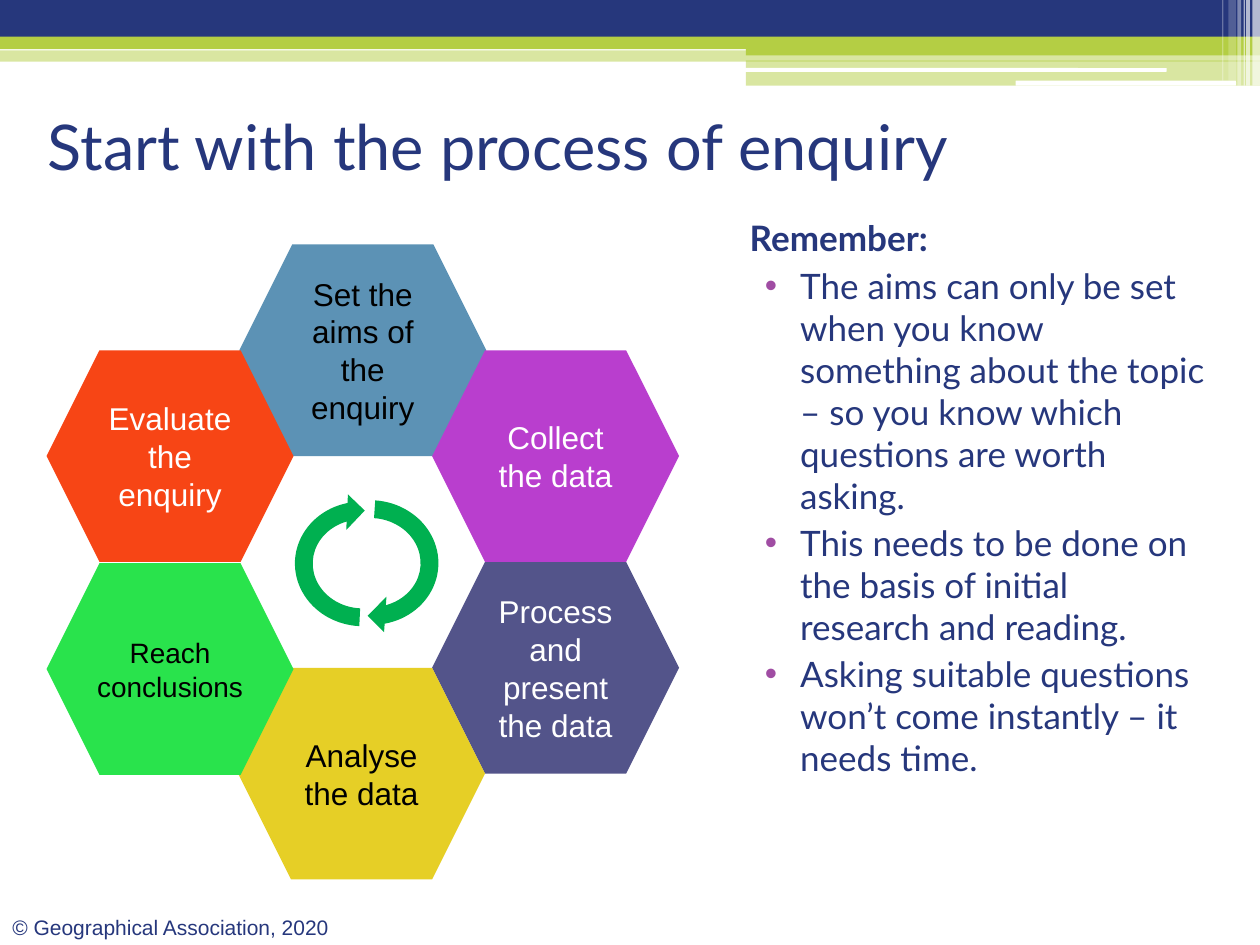
from pptx import Presentation
from pptx.util import Inches, Pt
from pptx.dml.color import RGBColor
from pptx.enum.shapes import MSO_SHAPE as Kind
from pptx.enum.text import PP_ALIGN as Align, MSO_ANCHOR as Anchor, MSO_AUTO_SIZE as Auto
from pptx.oxml.ns import qn
from lxml.etree import SubElement as Sub

NAVY, LIME, WHITE, BLACK = "26377C", "B4CE44", "FFFFFF", "000000"


def color(code):
    """Turn a hex string into a colour."""
    return RGBColor.from_string(code)


def write(para, text, size=20, font="Lato", ink=NAVY, bold=False, align=Align.LEFT, gap=0):
    """Put formatted text into a paragraph."""
    para.alignment = align
    para.space_before = Pt(gap)
    run = para.add_run()
    run.text = text
    run.font.size, run.font.name, run.font.bold = Pt(size), font, bold
    run.font.color.rgb = color(ink)


def bullet(para, mark=None, ink="A04DA3", left=0, hang=0):
    """Set the indent of a paragraph and its bullet, if any."""
    props = para._p.get_or_add_pPr()
    props.set("marL", str(Inches(left)))
    props.set("indent", str(Inches(hang)))
    if mark:
        Sub(Sub(props, qn("a:buClr")), qn("a:srgbClr"), val=ink)
        Sub(props, qn("a:buFont"), typeface="Arial")
        Sub(props, qn("a:buChar"), char=mark)
    else:
        Sub(props, qn("a:buNone"))


class Deck:
    """Hold the style and the current slide."""

    def __init__(self):
        """Start a deck with one slide."""
        self.show = Presentation()
        self.show.slide_width, self.show.slide_height = Inches(10), Inches(7.5)
        self.slide = self.show.slides.add_slide(self.show.slide_layouts[1])

    def shape(self, kind, box, fill, alpha=100, turn=0):
        """Add a flat preset shape."""
        item = self.slide.shapes.add_shape(kind, *map(Inches, box))
        item.shadow.inherit = False
        item.line.fill.background()
        item.fill.solid()
        item.fill.fore_color.rgb = color(fill)
        item.rotation = turn
        if alpha < 100:
            tint = item._element.spPr.find(qn("a:solidFill"))[0]
            Sub(tint, qn("a:alpha"), val=str(alpha * 1000))
        return item

    def hexagon(self, left, top, text, fill, ink, size=18, inset=0.1):
        """Add one step of the cycle."""
        item = self.shape(Kind.HEXAGON, (left, top, 1.96, 1.68), fill)
        frame = item.text_frame
        frame.word_wrap = True
        frame.vertical_anchor = Anchor.MIDDLE
        frame.margin_left = frame.margin_right = Inches(inset)
        write(frame.paragraphs[0], text, size=size, font="Arial", ink=ink, align=Align.CENTER)

    def holder(self, index, box):
        """Move a placeholder and return its text frame."""
        item = self.slide.placeholders[index]
        item.left, item.top, item.width, item.height = map(Inches, box)
        frame = item.text_frame
        frame.word_wrap = True
        frame.auto_size = Auto.NONE
        frame.vertical_anchor = Anchor.TOP
        return frame

    def title(self, text):
        """Fill the title."""
        write(self.holder(0, (0.28, 0.8, 8.07, 0.87)).paragraphs[0], text, size=36)

    def points(self, head, items):
        """Fill the body with a heading and bullets."""
        frame = self.holder(1, (5.85, 1.67, 3.83, 4.65))
        first = frame.paragraphs[0]
        bullet(first)
        write(first, head, bold=True)
        for text in items:
            para = frame.add_paragraph()
            bullet(para, "•", left=0.4, hang=-0.28)
            write(para, text, gap=3)

    def note(self, box, text):
        """Add a small text box."""
        frame = self.slide.shapes.add_textbox(*map(Inches, box)).text_frame
        frame.word_wrap = True
        write(frame.paragraphs[0], text, size=12, font="Arial")


def main():
    """Build the slide."""
    deck = Deck()
    bands = [
        ((0, 0.4, 10, 0.09), LIME, 50),
        ((0, 0, 10, 0.34), NAVY, 100),
        ((0, 0.29, 10, 0.1), LIME, 100),
        ((5.92, 0.34, 4.08, 0.1), LIME, 100),
        ((5.92, 0.48, 4.08, 0.2), LIME, 50),
    ]
    for box, fill, alpha in bands:
        deck.shape(Kind.RECTANGLE, box, fill, alpha)
    for box in [(5.91, 0.54, 3.35, 0.03), (8.06, 0.64, 1.75, 0.04)]:
        deck.shape(Kind.ROUNDED_RECTANGLE, box, WHITE)
    stripes = [
        (9.94, 0.06, 0.68, 65), (9.89, 0.03, 0.68, 65), (9.87, 0.01, 0.68, 60),
        (9.82, 0.03, 0.68, 40), (9.75, 0.06, 0.64, 20), (9.7, 0.01, 0.64, 30),
    ]
    for left, width, height, alpha in stripes:
        deck.shape(Kind.RECTANGLE, (left, 0, width, height), WHITE, alpha)

    deck.hexagon(3.43, 4.46, "Process and present the data", "53548A", WHITE)
    deck.hexagon(1.9, 1.94, "Set the aims of the enquiry", "5C92B5", BLACK)
    deck.hexagon(1.89, 5.3, "Analyse the data", "E6CF26", BLACK)
    deck.hexagon(0.37, 4.47, "Reach conclusions", "29E34C", BLACK, size=16, inset=0.04)
    deck.hexagon(0.37, 2.78, "Evaluate the enquiry", "F74515", WHITE)
    deck.hexagon(3.43, 2.78, "Collect the data", "B93ECE", WHITE)
    for left, top, turn in [(2.38, 3.86, 93.8), (2.31, 3.87, 272.7)]:
        deck.shape(Kind.CIRCULAR_ARROW, (left, top, 1.13, 1.21), "00B050", turn=turn)

    deck.title("Start with the process of enquiry")
    deck.points("Remember:", [
        "The aims can only be set when you know something about the topic "
        "– so you know which questions are worth asking.",
        "This needs to be done on the basis of initial research and reading.",
        "Asking suitable questions won’t come instantly – it needs time.",
    ])
    deck.note((0, 7.21, 2.87, 0.3), "© Geographical Association, 2020")
    deck.show.save("out.pptx")


if __name__ == "__main__":
    main()
